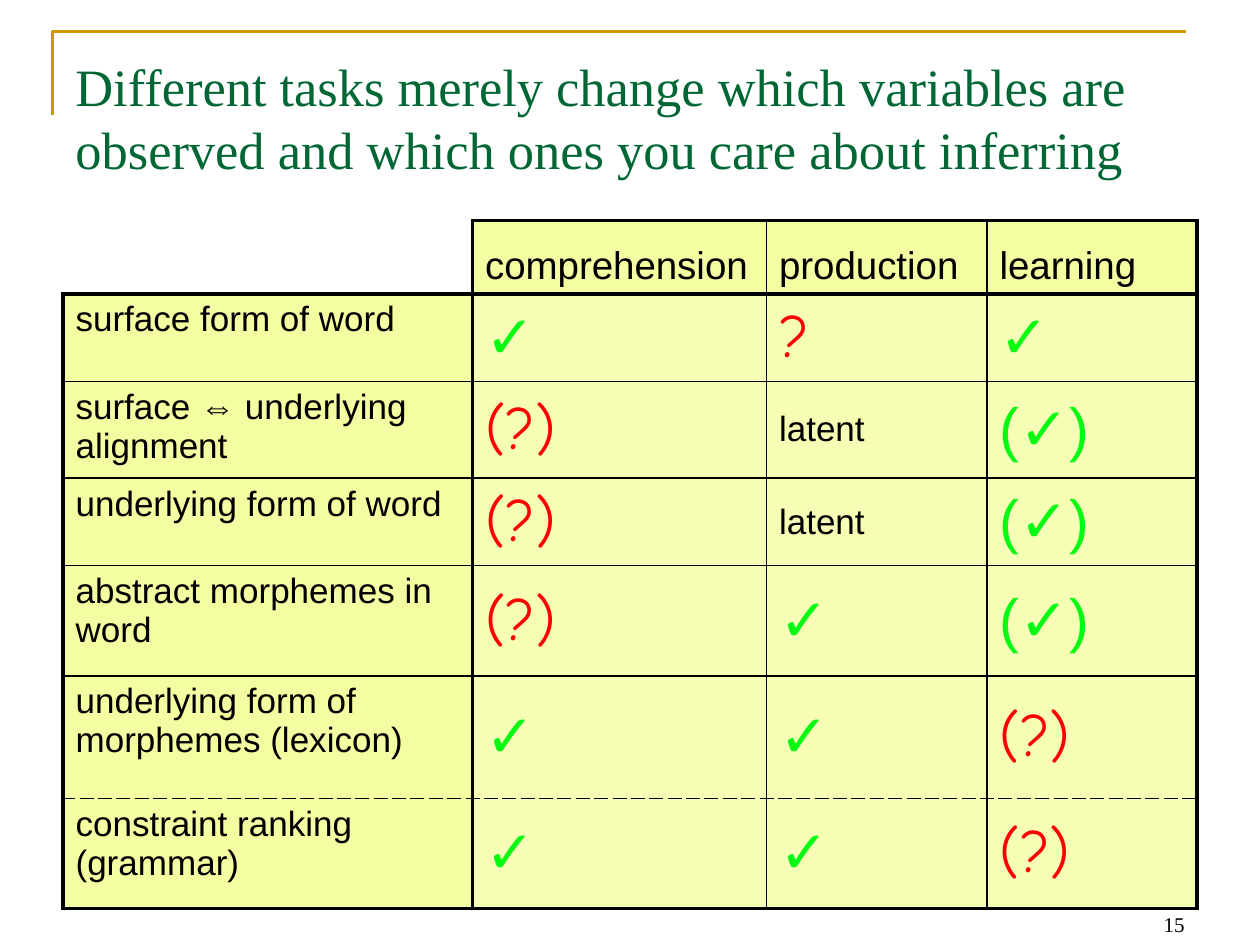
from dataclasses import dataclass

from lxml.etree import SubElement
from pptx import Presentation
from pptx.dml.color import RGBColor
from pptx.enum.text import MSO_ANCHOR, PP_ALIGN
from pptx.oxml.ns import qn
from pptx.util import Pt

COLOURS = {
    "gold": "CC9900",
    "green": "006633",
    "black": "000000",
    "white": "FFFFFF",
    "label": "F4FDA1",
    "body": "F6FDB5",
    "tick": "05FB11",
    "query": "FF0000",
}
THIN, THICK = 1, 2.25


@dataclass(frozen=True)
class Style:
    size: float
    font: str
    colour: str


TITLE = Style(30, "Times New Roman", "green")
NUMBER = Style(12, "Times New Roman", "black")
HEADER = Style(22, "Arial", "black")
LABEL = Style(20, "Arial", "black")
TICK = Style(34, "Arial", "tick")
QUERY = Style(34, "Comic Neue", "query")

COLUMN_WIDTHS = [234, 168, 126, 120]
ROW_HEIGHTS = [42, 50, 50, 50, 63, 70, 63]
ROWS = [
    ["", "comprehension", "production", "learning"],
    ["surface form of word", "✓", "?", "✓"],
    ["surface ⇔ underlying alignment", "(?)", "latent", "(✓)"],
    ["underlying form of word", "(?)", "latent", "(✓)"],
    ["abstract morphemes in word", "(?)", "✓", "(✓)"],
    ["underlying form of morphemes (lexicon)", "✓", "✓", "(?)"],
    ["constraint ranking (grammar)", "✓", "✓", "(?)"],
]
LAST_ROW, LAST_COLUMN = len(ROWS) - 1, len(COLUMN_WIDTHS) - 1
DASHED_EDGE = LAST_ROW  # horizontal edge above the grammar row


def rgb(name: str) -> RGBColor:
    return RGBColor.from_string(COLOURS[name])


def add_span(para, text: str, style: Style) -> None:
    span = para.add_run()
    span.text = text
    span.font.size = Pt(style.size)
    span.font.name = style.font
    span.font.color.rgb = rgb(style.colour)


def add_text(page, left, top, width, height, text: str, style: Style,
             anchor, align) -> None:
    box = page.shapes.add_textbox(Pt(left), Pt(top), Pt(width), Pt(height))
    frame = box.text_frame
    frame.word_wrap = True
    frame.vertical_anchor = anchor
    para = frame.paragraphs[0]
    para.alignment = align
    add_span(para, text, style)


def add_border(cell, side: str, width: float, dashed: bool = False) -> None:
    """Draw one cell edge; a width of zero hides it."""
    line = SubElement(cell._tc.get_or_add_tcPr(), qn(f"a:ln{side}"),
                      w=str(Pt(width)))
    if not width:
        SubElement(line, qn("a:noFill"))
        return
    fill = SubElement(line, qn("a:solidFill"))
    SubElement(fill, qn("a:srgbClr"), val=COLOURS["black"])
    SubElement(line, qn("a:prstDash"), val="dash" if dashed else "solid")


def style_borders(cell, row: int, column: int) -> None:
    def vertical(edge: int) -> float:
        return THICK if edge in (0, 1, LAST_COLUMN + 1) else THIN

    def horizontal(edge: int) -> float:
        return THICK if edge in (0, 1, LAST_ROW + 1) else THIN

    corner = row == column == 0
    add_border(cell, "L", 0 if corner else vertical(column))
    add_border(cell, "R", vertical(column + 1))
    add_border(cell, "T", 0 if corner else horizontal(row), row == DASHED_EDGE)
    add_border(cell, "B", horizontal(row + 1), row + 1 == DASHED_EDGE)


def cell_style(text: str, row: int) -> Style:
    if row == 0:
        return HEADER
    if "✓" in text:
        return TICK
    return QUERY if "?" in text else LABEL


def fill_cell(cell, text: str, row: int, column: int) -> None:
    style_borders(cell, row, column)
    cell.fill.solid()
    if row == column == 0:
        cell.fill.fore_color.rgb = rgb("white")
        return
    is_label = row == 0 or column == 0
    cell.fill.fore_color.rgb = rgb("label" if is_label else "body")
    if row == 0:
        cell.vertical_anchor = MSO_ANCHOR.BOTTOM
    else:
        cell.vertical_anchor = MSO_ANCHOR.TOP if column == 0 else MSO_ANCHOR.MIDDLE
    add_span(cell.text_frame.paragraphs[0], text, cell_style(text, row))


def add_task_table(page) -> None:
    table = page.shapes.add_table(
        len(ROWS), len(COLUMN_WIDTHS), Pt(36), Pt(126),
        Pt(sum(COLUMN_WIDTHS)), Pt(sum(ROW_HEIGHTS))).table
    table.first_row = False
    table.horz_banding = False
    for column, width in zip(table.columns, COLUMN_WIDTHS):
        column.width = Pt(width)
    for row, height in zip(table.rows, ROW_HEIGHTS):
        row.height = Pt(height)
    for r, texts in enumerate(ROWS):
        for c, text in enumerate(texts):
            fill_cell(table.cell(r, c), text, r, c)


def add_title_rule(page) -> None:
    builder = page.shapes.build_freeform(Pt(30), Pt(66))
    builder.add_line_segments([(Pt(30), Pt(18)), (Pt(678), Pt(18))], close=False)
    rule = builder.convert_to_shape()
    rule.shadow.inherit = False
    rule.fill.background()
    rule.line.color.rgb = rgb("gold")
    rule.line.width = Pt(1.5)


def main() -> None:
    deck = Presentation()
    deck.slide_width, deck.slide_height = Pt(720), Pt(540)
    page = deck.slides.add_slide(deck.slide_layouts[6])

    # Title with its corner rule
    add_title_rule(page)
    add_text(page, 36, 21.6, 648, 90,
             "Different tasks merely change which variables are observed "
             "and which ones you care about inferring",
             TITLE, MSO_ANCHOR.MIDDLE, PP_ALIGN.LEFT)

    # Page number
    add_text(page, 630, 503, 54, 36, "15", NUMBER,
             MSO_ANCHOR.BOTTOM, PP_ALIGN.RIGHT)

    # Tasks and variables
    add_task_table(page)

    deck.save("out.pptx")


if __name__ == "__main__":
    main()
